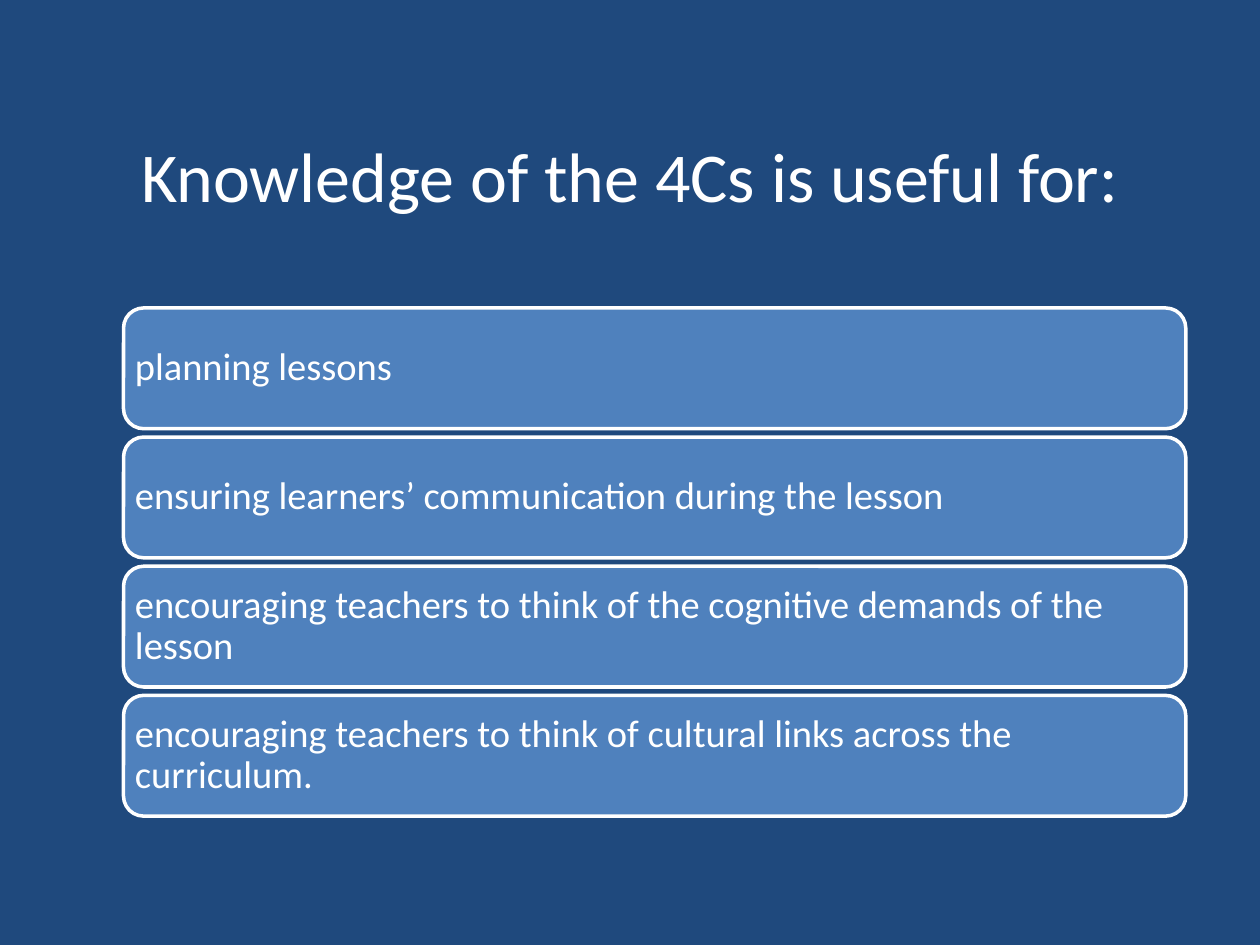
from pptx import Presentation
from pptx.dml.color import RGBColor
from pptx.enum.shapes import MSO_SHAPE
from pptx.enum.text import MSO_ANCHOR, PP_ALIGN
from pptx.util import Pt

WHITE, BLUE, NAVY = "FFFFFF", "4F81BD", "1F497D"
USES = [
    "planning lessons",
    "ensuring learners’ communication during the lesson",
    "encouraging teachers to think of the cognitive demands of the lesson",
    "encouraging teachers to think of cultural links across the curriculum.",
]
BAR_LEFT, BAR_TOP, BAR_WIDTH, BAR_HEIGHT, BAR_STEP = 70.6, 176, 607, 69, 73.8


def paint(color_format, color):
    color_format.rgb = RGBColor.from_string(color)


def write(box, text, size, paragraph_format, margin):
    """Fill the box with one white, vertically centred paragraph."""
    frame = box.text_frame
    frame_format = {"word_wrap": True, "vertical_anchor": MSO_ANCHOR.MIDDLE}
    for side in ("left", "right", "top", "bottom"):
        frame_format[f"margin_{side}"] = Pt(margin)
    for name, value in frame_format.items():
        setattr(frame, name, value)
    paragraph = frame.paragraphs[0]
    for name, value in paragraph_format.items():
        setattr(paragraph, name, value)
    span = paragraph.add_run()
    span.text = text
    for name, value in {"name": "Calibri", "size": Pt(size)}.items():
        setattr(span.font, name, value)
    paint(span.font.color, WHITE)


deck = Presentation()
deck.slide_width, deck.slide_height = Pt(720), Pt(540)
page = deck.slides.add_slide(deck.slide_layouts[6])
page.background.fill.solid()
paint(page.background.fill.fore_color, NAVY)

title = page.shapes.add_textbox(Pt(54), Pt(21), Pt(612), Pt(158))
write(title, "Knowledge of the 4Cs is useful for:", 40, {"alignment": PP_ALIGN.CENTER}, 4)

for index, use in enumerate(USES):
    bar = page.shapes.add_shape(
        MSO_SHAPE.ROUNDED_RECTANGLE,
        Pt(BAR_LEFT), Pt(BAR_TOP + index * BAR_STEP), Pt(BAR_WIDTH), Pt(BAR_HEIGHT),
    )
    bar.shadow.inherit = False
    bar.fill.solid()
    paint(bar.fill.fore_color, BLUE)
    paint(bar.line.color, WHITE)
    bar.line.width = Pt(2)
    # The rounded corners already push the text in by about 3 points.
    write(bar, use, 22, {"alignment": PP_ALIGN.LEFT, "line_spacing": 0.9}, 3.2)

deck.save("out.pptx")
